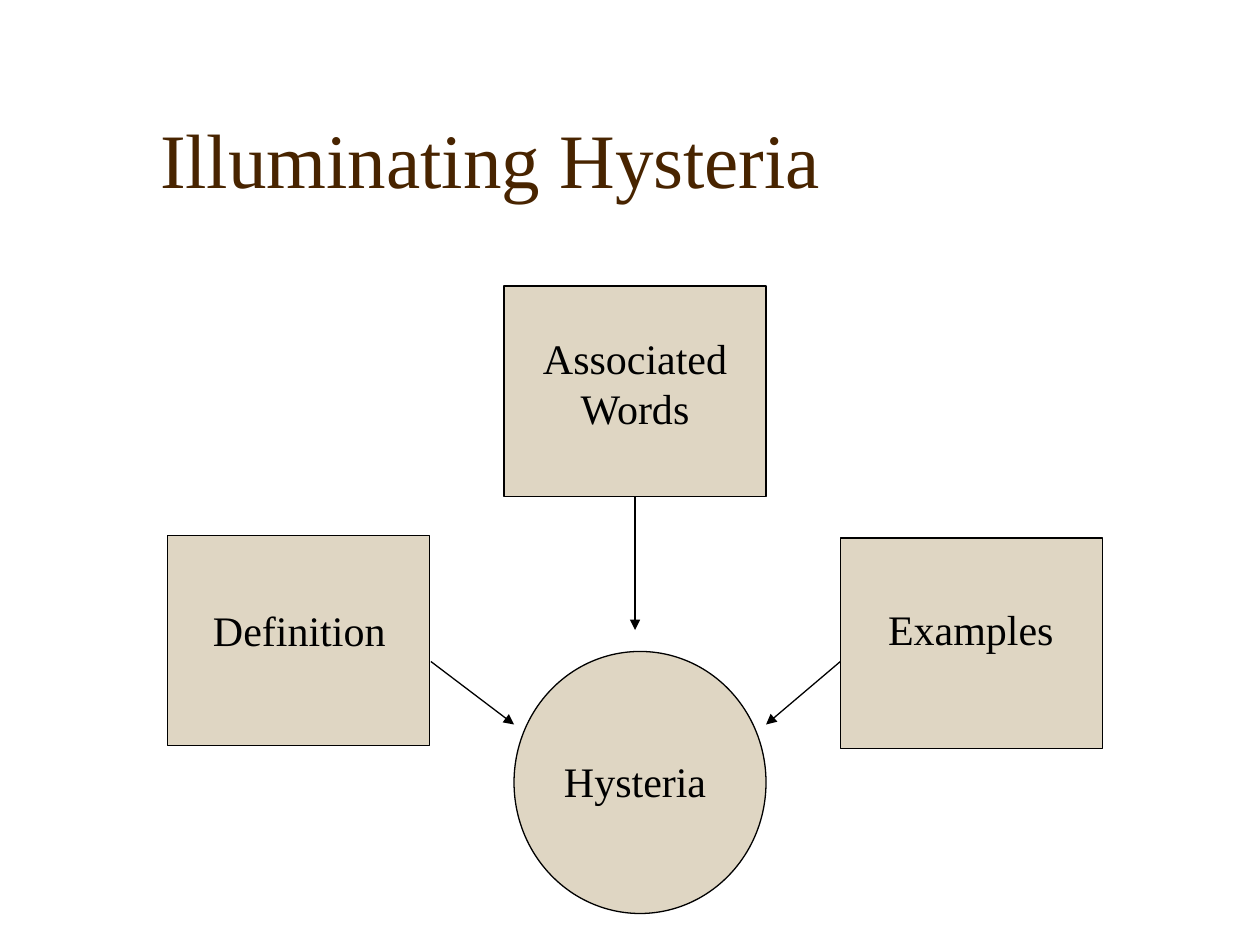
from typing import NamedTuple, Optional

from lxml.etree import SubElement
from pptx import Presentation
from pptx.dml.color import RGBColor
from pptx.enum.shapes import MSO_CONNECTOR as Connector
from pptx.enum.shapes import MSO_SHAPE as Shape
from pptx.enum.text import MSO_ANCHOR as Anchor
from pptx.enum.text import MSO_AUTO_SIZE as AutoSize
from pptx.enum.text import PP_ALIGN as Align
from pptx.oxml.ns import qn
from pptx.util import Inches, Pt

COLORS = {"title": "482400", "fill": "DFD6C3", "ink": "000000"}
FONT = "Times New Roman"
BOTTOM_SIDE = 2


class Box(NamedTuple):
    left: float
    top: float
    width: float
    height: float


class Node(NamedTuple):
    kind: Shape
    box: Box


class Label(NamedTuple):
    words: str
    box: Box


class Arrow(NamedTuple):
    start: tuple[float, float]
    end: tuple[float, float]
    source: Optional[str] = None


NODES = {
    "definition": Node(Shape.RECTANGLE, Box(1.33, 4.25, 2.08, 1.67)),
    "words": Node(Shape.RECTANGLE, Box(4, 2.27, 2.08, 1.67)),
    "examples": Node(Shape.RECTANGLE, Box(6.67, 4.27, 2.08, 1.67)),
    "hysteria": Node(Shape.OVAL, Box(4.08, 5.17, 2, 2.08)),
}
LABELS = [
    Label("Hysteria", Box(4.25, 5.95, 1.58, 0.5)),
    Label("Definition", Box(1.5, 4.75, 1.75, 0.5)),
    Label("Associated Words", Box(4, 2.59, 2.08, 0.91)),
    Label("Examples", Box(6.83, 4.74, 1.75, 0.5)),
]
ARROWS = [
    Arrow((3.42, 5.25), (4.08, 5.75)),
    Arrow((5.04, 3.94), (5.04, 5), "words"),
    Arrow((6.67, 5.25), (6.08, 5.75)),
]


def color(name: str) -> RGBColor:
    return RGBColor.from_string(COLORS[name])


def add_run(paragraph, words: str, size: int, ink: str) -> None:
    run = paragraph.add_run()
    run.text = words
    run.font.name = FONT
    run.font.size = Pt(size)
    run.font.color.rgb = color(ink)


def set_outline(line) -> None:
    line.color.rgb = color("ink")
    line.width = Pt(0.75)


def set_title(title, words: str, box: Box) -> None:
    title.left, title.top, title.width, title.height = map(Inches, box)
    frame = title.text_frame
    frame.vertical_anchor = Anchor.BOTTOM
    frame.paragraphs[0].alignment = Align.LEFT
    add_run(frame.paragraphs[0], words, 44, "title")


def add_node(slide, node: Node):
    shape = slide.shapes.add_shape(node.kind, *map(Inches, node.box))
    shape.shadow.inherit = False
    shape.fill.solid()
    shape.fill.fore_color.rgb = color("fill")
    set_outline(shape.line)
    return shape


def add_label(slide, label: Label) -> None:
    frame = slide.shapes.add_textbox(*map(Inches, label.box)).text_frame
    frame.word_wrap = True
    frame.auto_size = AutoSize.SHAPE_TO_FIT_TEXT
    frame.paragraphs[0].alignment = Align.CENTER
    add_run(frame.paragraphs[0], label.words, 24, "ink")


def add_arrow(slide, arrow: Arrow, shapes: dict) -> None:
    ends = map(Inches, arrow.start + arrow.end)
    connector = slide.shapes.add_connector(Connector.STRAIGHT, *ends)
    if arrow.source:
        connector.begin_connect(shapes[arrow.source], BOTTOM_SIDE)
    set_outline(connector.line)
    SubElement(connector.line._get_or_add_ln(), qn("a:tailEnd"), type="triangle")
    SubElement(connector._element.spPr, qn("a:effectLst"))


def main() -> None:
    deck = Presentation()
    deck.slide_width, deck.slide_height = Inches(10), Inches(7.5)
    slide = deck.slides.add_slide(deck.slide_layouts[5])
    set_title(slide.shapes.title, "Illuminating Hysteria", Box(1.17, 0.42, 8.5, 1.25))
    shapes = {name: add_node(slide, node) for name, node in NODES.items()}
    for label in LABELS:
        add_label(slide, label)
    for arrow in ARROWS:
        add_arrow(slide, arrow, shapes)
    deck.save("out.pptx")


if __name__ == "__main__":
    main()
